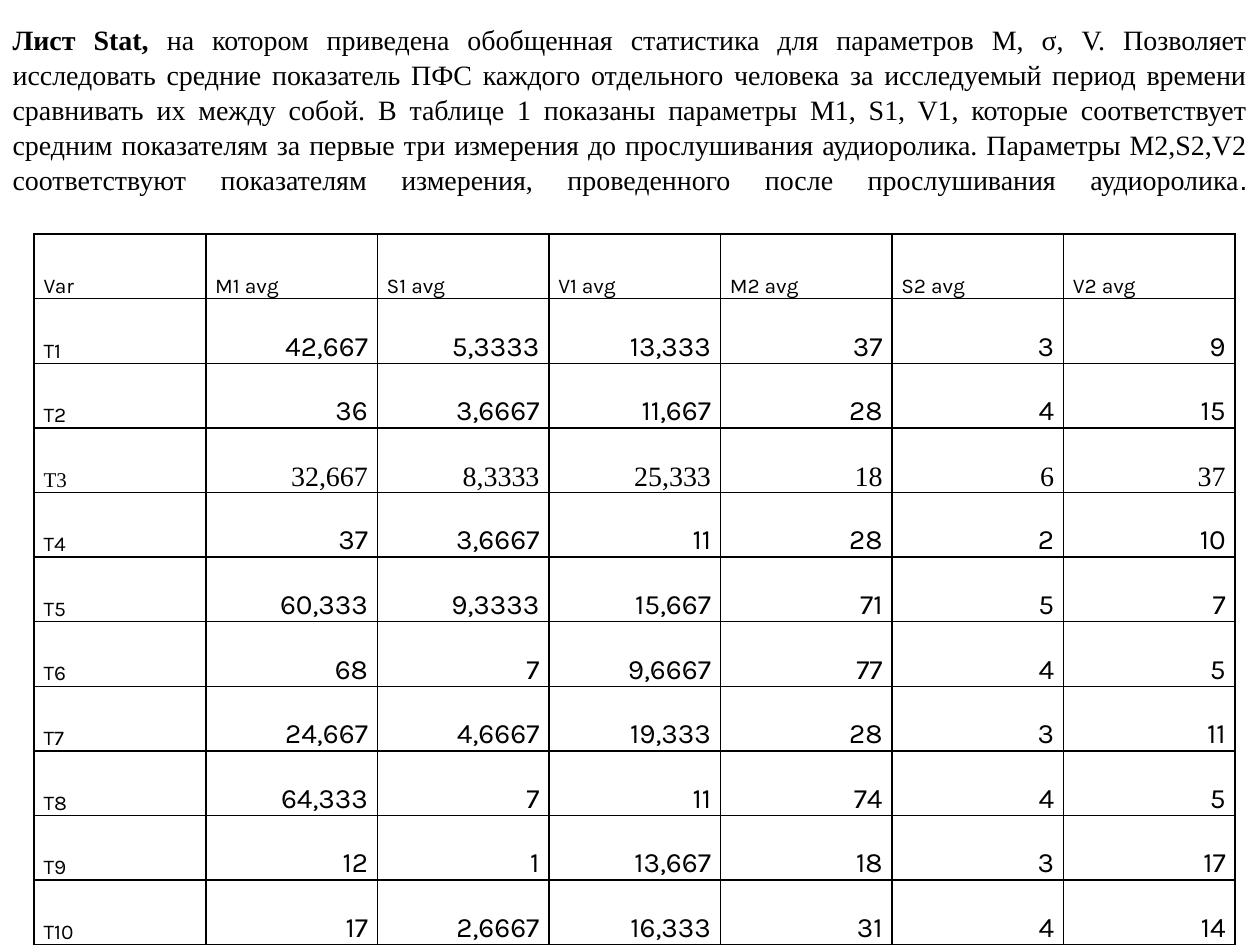
from dataclasses import dataclass

from lxml import etree
from pptx import Presentation
from pptx import util as u
from pptx.dml import color
from pptx.enum import text
from pptx.oxml import ns

COLORS = {"ink": "000000", "paper": "FFFFFF"}
SERIF, SANS, PLAIN = "Times New Roman", "Karla", "Arial"
LABEL_SIZE, VALUE_SIZE = 12, 16


@dataclass
class Phrase:
    wording: str
    face: str = SERIF
    bold: bool = False


@dataclass
class Subject:
    label: str
    averages: str
    face: str = SANS


INTRO = [
    Phrase("Лист Stat,", bold=True),
    Phrase(
        " на котором приведена обобщенная статистика для параметров М, σ, V. "
        "Позволяет исследовать средние показатель ПФС каждого отдельного человека "
        "за исследуемый период времени сравнивать их между собой. В таблице 1 "
        "показаны параметры M1, S1, V1, которые соответствует средним показателям "
        "за первые три измерения до прослушивания аудиоролика. Параметры M2,S2,V2 "
        "соответствуют показателям измерения, проведенного после прослушивания "
        "аудиоролика"
    ),
    Phrase(".", face=PLAIN),
]
HEADINGS = ["Var"] + [f"{name} avg" for name in ("M1", "S1", "V1", "M2", "S2", "V2")]
SUBJECTS = [
    Subject("T1", "42,667 5,3333 13,333 37 3 9"),
    Subject("T2", "36 3,6667 11,667 28 4 15"),
    Subject("T3", "32,667 8,3333 25,333 18 6 37", SERIF),
    Subject("T4", "37 3,6667 11 28 2 10"),
    Subject("T5", "60,333 9,3333 15,667 71 5 7"),
    Subject("T6", "68 7 9,6667 77 4 5"),
    Subject("T7", "24,667 4,6667 19,333 28 3 11"),
    Subject("T8", "64,333 7 11 74 4 5"),
    Subject("T9", "12 1 13,667 18 3 17"),
    Subject("T10", "17 2,6667 16,333 31 4 14"),
]


def style_font(font, face: str, size: float, bold: bool = False) -> None:
    font.name, font.size, font.bold = face, u.Pt(size), bold
    font.color.rgb = color.RGBColor.from_string(COLORS["ink"])


def write_intro(title) -> None:
    title.left, title.top = u.Cm(0), u.Cm(0.33)
    title.width, title.height = u.Cm(25.4), u.Cm(4.39)
    frame = title.text_frame
    frame.word_wrap = True
    frame.auto_size = text.MSO_AUTO_SIZE.NONE
    frame.vertical_anchor = text.MSO_ANCHOR.MIDDLE
    paragraph = frame.paragraphs[0]
    paragraph.alignment = text.PP_ALIGN.JUSTIFY
    paragraph.line_spacing = 1.05
    for phrase in INTRO:
        run = paragraph.add_run()
        run.text = phrase.wording
        style_font(run.font, phrase.face, VALUE_SIZE, phrase.bold)
    paragraph.add_line_break()
    line_break = paragraph._p.find(ns.qn("a:br"))
    for parent, tag in ((line_break, "a:rPr"), (paragraph._p, "a:endParaRPr")):
        ending = etree.SubElement(parent, ns.qn(tag), sz=str(VALUE_SIZE * 100))
        etree.SubElement(ending, ns.qn("a:latin"), typeface=PLAIN)


def draw_borders(cell) -> None:
    properties = cell._tc.get_or_add_tcPr()
    for position, side in enumerate(("lnL", "lnR", "lnT", "lnB")):
        line = etree.Element(ns.qn(f"a:{side}"), w=str(u.Pt(1)))
        fill = etree.SubElement(line, ns.qn("a:solidFill"))
        etree.SubElement(fill, ns.qn("a:srgbClr"), val=COLORS["ink"])
        properties.insert(position, line)


def write_cell(cell, wording: str, face: str, is_value: bool) -> None:
    cell.fill.background()
    draw_borders(cell)
    cell.margin_left = cell.margin_right = u.Cm(0.19)
    cell.margin_top = cell.margin_bottom = 0
    cell.vertical_anchor = text.MSO_ANCHOR.BOTTOM
    paragraph = cell.text_frame.paragraphs[0]
    paragraph.text = wording
    paragraph.line_spacing = 1.15
    paragraph.alignment = text.PP_ALIGN.RIGHT if is_value else text.PP_ALIGN.LEFT
    style_font(paragraph.runs[0].font, face, VALUE_SIZE if is_value else LABEL_SIZE)


def add_statistics(slide) -> None:
    statistics = slide.shapes.add_table(
        len(SUBJECTS) + 1, len(HEADINGS),
        u.Cm(0.69), u.Cm(4.72), u.Cm(24.21), u.Cm(14.33),
    ).table
    statistics.first_row = statistics.horz_banding = False
    for column, heading in enumerate(HEADINGS):
        write_cell(statistics.cell(0, column), heading, SANS, False)
    for row, subject in enumerate(SUBJECTS, start=1):
        for column, wording in enumerate([subject.label, *subject.averages.split()]):
            write_cell(statistics.cell(row, column), wording, subject.face, column > 0)


def main() -> None:
    deck = Presentation()
    deck.slide_width, deck.slide_height = u.Cm(25.4), u.Cm(19.05)
    slide = deck.slides.add_slide(deck.slide_layouts[5])
    slide.background.fill.solid()
    slide.background.fill.fore_color.rgb = color.RGBColor.from_string(COLORS["paper"])
    write_intro(slide.shapes.title)
    add_statistics(slide)
    deck.save("out.pptx")


if __name__ == "__main__":
    main()
